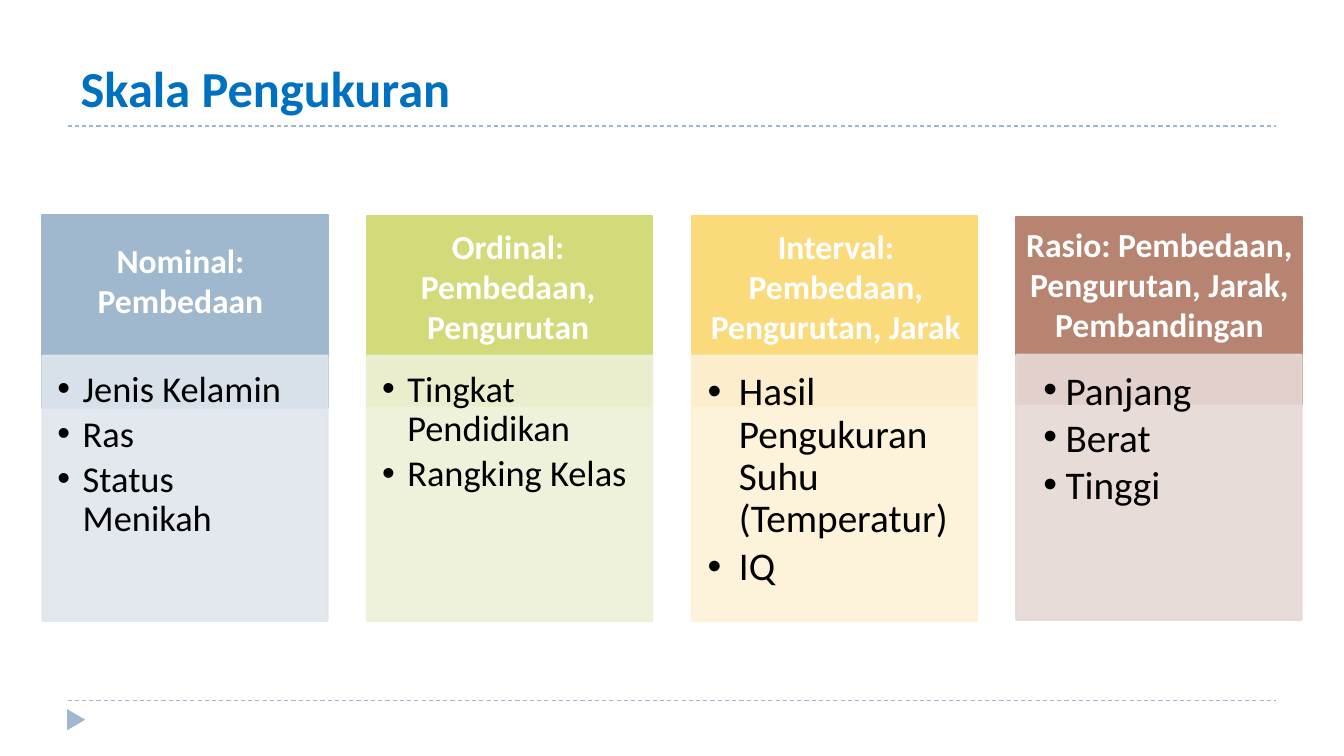
from dataclasses import dataclass

from lxml.etree import SubElement
from pptx import Presentation
from pptx.dml.color import RGBColor
from pptx.enum.dml import MSO_LINE
from pptx.enum.shapes import MSO_CONNECTOR, MSO_SHAPE
from pptx.enum.text import MSO_ANCHOR, PP_ALIGN
from pptx.oxml.ns import qn
from pptx.util import Inches, Pt

FONT = "Calibri"
ACCENT = "9FB8CD"
CARD_LEFT, CARD_STEP, CARD_WIDTH = 0.42, 3.22, 2.83
BODY_HEIGHT = 2.63


@dataclass
class Scale:
    """One measurement scale, with its heading, examples and layout."""
    heading: list
    heading_at: tuple
    examples: list
    colour: str
    tint: str
    head_top: float
    head_height: float
    body_top: float = 3.53
    list_at: tuple = ()
    insets: tuple = (0.15, 0.15, 0.2, 0.23)
    size: int = 26
    indent: float = 0.25
    line_spacing: float = 0.9
    space_after: float = 4


SCALES = [
    Scale(["Nominal: Pembedaan"], (0.5, 2.33, 2.58, 0.91),
          ["Jenis Kelamin", "Ras", "Status Menikah"],
          ACCENT, "DFE6ED", 2.13, 1.92),
    Scale(["Ordinal: Pembedaan, Pengurutan"], (3.75, 2.19, 2.58, 1.31),
          ["Tingkat Pendidikan", "Rangking Kelas"],
          "D2DA7A", "EEF1D7", 2.14, 1.89),
    Scale(["Interval:", "Pembedaan, Pengurutan, Jarak"], (6.58, 2.19, 3.42, 1.31),
          ["Hasil Pengukuran Suhu (Temperatur)", "IQ"],
          "FADA7A", "FDF1D7", 2.14, 1.89,
          insets=(0.16, 0.16, 0.22, 0.24), size=28, indent=0.31),
    Scale(["Rasio: Pembedaan, Pengurutan, Jarak, Pembandingan"],
          (10, 2.17, 3, 1.31), ["Panjang", "Berat", "Tinggi"],
          "B88472", "E6D9D5", 2.15, 1.86, body_top=3.52,
          list_at=(10.25, 3.58, 2.5, 1.51), insets=(0.1, 0.05, 0.1, 0.05),
          size=28, indent=0.22, line_spacing=1, space_after=0),
]


def colour(value):
    """Turn a hex string into a colour."""
    return RGBColor.from_string(value)


def inches(values):
    """Convert a sequence of numbers to lengths."""
    return [Inches(value) for value in values]


def format_runs(paragraph, size, shade, bold=False):
    """Set the font of every run in a paragraph."""
    for span in paragraph.runs:
        span.font.name = FONT
        span.font.size = Pt(size)
        span.font.bold = bold
        span.font.color.rgb = colour(shade)


def set_insets(frame, insets):
    """Set the left, top, right and bottom margins of a text frame."""
    (frame.margin_left, frame.margin_top,
     frame.margin_right, frame.margin_bottom) = inches(insets)


def add_text(page, at, lines):
    """Add a wrapping text box with one paragraph per line."""
    box = page.shapes.add_textbox(*inches(at))
    frame = box.text_frame
    frame.word_wrap = True
    frame.text = "\n".join(lines)
    return frame


def add_bullet(paragraph, indent):
    """Give a paragraph a hanging bullet."""
    properties = paragraph._p.get_or_add_pPr()
    properties.set("marL", str(Inches(indent)))
    properties.set("indent", str(-Inches(indent)))
    SubElement(properties, qn("a:buFont"), typeface="Arial")
    SubElement(properties, qn("a:buChar"), char="•")


def add_panel(page, at, shade, opacity=100):
    """Add a rectangle with matching fill and outline."""
    panel = page.shapes.add_shape(MSO_SHAPE.RECTANGLE, *inches(at))
    panel.shadow.inherit = False
    panel.fill.solid()
    panel.fill.fore_color.rgb = colour(shade)
    panel.line.color.rgb = colour(shade)
    panel.line.width = Pt(1.5)
    if opacity < 100:
        for tone in panel._element.spPr.iter(qn("a:srgbClr")):
            SubElement(tone, qn("a:alpha"), val=str(opacity * 1000))


def add_rule(page, top):
    """Add a dashed line across the page."""
    rule = page.shapes.add_connector(
        MSO_CONNECTOR.STRAIGHT, *inches((0.67, top, 12.66, top)))
    rule.line.color.rgb = colour(ACCENT)
    rule.line.width = Pt(0.75)
    rule.line.dash_style = MSO_LINE.DASH
    SubElement(rule._element.spPr, qn("a:effectLst"))


def add_marker(page):
    """Add the small footer triangle."""
    marker = page.shapes.add_shape(
        MSO_SHAPE.ISOSCELES_TRIANGLE, *inches((0.65, 7.05, 0.21, 0.18)))
    marker.rotation = 90
    marker.shadow.inherit = False
    marker.fill.solid()
    marker.fill.fore_color.rgb = colour(ACCENT)
    marker.line.fill.background()


def set_title(page, text):
    """Place and format the title."""
    title = page.shapes.title
    title.left, title.top, title.width, title.height = inches((0.68, 0.15, 12, 1.08))
    frame = title.text_frame
    frame.text = text
    frame.vertical_anchor = MSO_ANCHOR.BOTTOM
    set_insets(frame, (0.12, 0.06, 0.12, 0.06))
    frame.paragraphs[0].alignment = PP_ALIGN.LEFT
    format_runs(frame.paragraphs[0], 36, "0070C0", bold=True)


def add_card(page, left, scale):
    """Add the panels, heading and examples of one scale."""
    body = (left, scale.body_top, CARD_WIDTH, BODY_HEIGHT)
    add_panel(page, (left, scale.head_top, CARD_WIDTH, scale.head_height), scale.colour)
    add_panel(page, body, scale.tint, opacity=90)
    heading = add_text(page, scale.heading_at, scale.heading)
    for paragraph in heading.paragraphs:
        paragraph.alignment = PP_ALIGN.CENTER
        format_runs(paragraph, 24, "FFFFFF", bold=True)
    examples = add_text(page, scale.list_at or body, scale.examples)
    set_insets(examples, scale.insets)
    for paragraph in examples.paragraphs:
        paragraph.line_spacing = scale.line_spacing
        paragraph.space_after = Pt(scale.space_after)
        add_bullet(paragraph, scale.indent)
        format_runs(paragraph, scale.size, "000000")


def main():
    """Build and save the slide."""
    deck = Presentation()
    deck.slide_width, deck.slide_height = inches((13.33, 7.5))
    page = deck.slides.add_slide(deck.slide_layouts[5])
    for top in (6.95, 1.25):
        add_rule(page, top)
    add_marker(page)
    set_title(page, "Skala Pengukuran")
    for index, scale in enumerate(SCALES):
        add_card(page, CARD_LEFT + index * CARD_STEP, scale)
    deck.save("out.pptx")


if __name__ == "__main__":
    main()
